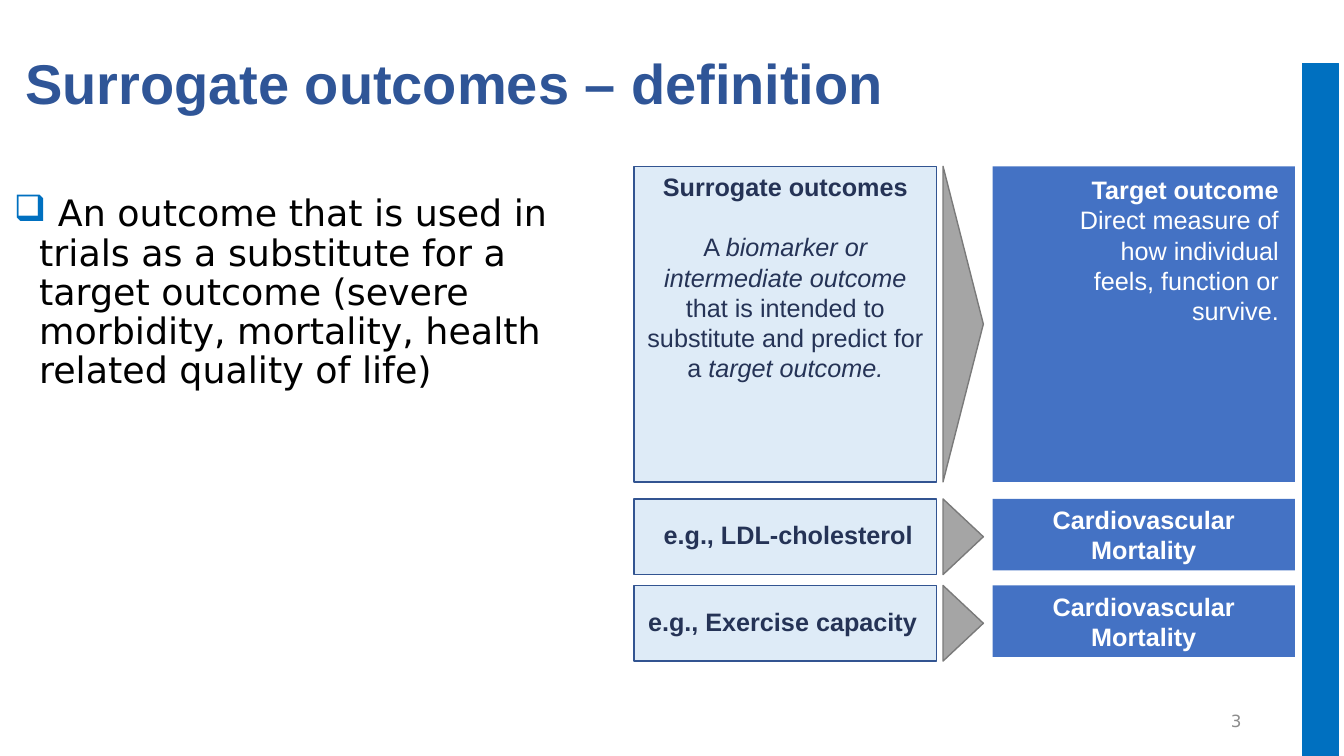
"""Build the slide that defines surrogate outcomes."""
from dataclasses import dataclass

from lxml.etree import SubElement
from pptx import Presentation
from pptx.dml.color import RGBColor
from pptx.enum.shapes import MSO_SHAPE as Preset
from pptx.enum.text import MSO_ANCHOR as Anchor, MSO_AUTO_SIZE as AutoSize, PP_ALIGN as Align
from pptx.oxml.ns import qn
from pptx.util import Pt

TITLE_BLUE = RGBColor(0x2F, 0x55, 0x97)
STRIPE_BLUE = RGBColor(0x00, 0x70, 0xC0)
TARGET_BLUE = RGBColor(0x44, 0x72, 0xC4)
PALE_BLUE = RGBColor(0xDE, 0xEB, 0xF7)
EDGE_BLUE = RGBColor(0x32, 0x54, 0x91)
NAVY = RGBColor(0x25, 0x33, 0x56)
ARROW_GRAY = RGBColor(0xA5, 0xA5, 0xA5)
ARROW_EDGE = RGBColor(0x7A, 0x7A, 0x7A)
NUMBER_GRAY = RGBColor(0x8C, 0x8C, 0x8C)
WHITE = RGBColor(0xFF, 0xFF, 0xFF)
BLACK = RGBColor(0, 0, 0)

HEADING_FONT = "Arial"
BODY_FONT = "DejaVu Sans"

SURROGATE_LEFT, TARGET_LEFT, PANEL_WIDTH = 453, 709, 216
ARROW_LEFT, ARROW_WIDTH = 673.6, 28.8


@dataclass(frozen=True)
class Piece:
    text: str
    bold: bool = False
    italic: bool = False


@dataclass(frozen=True)
class Panel:
    paragraphs: list[list[Piece]]
    height: float
    align: Align = Align.CENTER
    anchor: Anchor = Anchor.MIDDLE
    insets: tuple[float, float, float, float] = (7.2, 3.6, 7.2, 3.6)
    gap: float = 0


@dataclass(frozen=True)
class Row:
    top: float
    surrogate: Panel
    target: Panel


MORTALITY = Panel([[Piece("Cardiovascular Mortality", bold=True)]], 51)

ROWS = [
    Row(
        118.8,
        Panel(
            [
                [Piece("Surrogate outcomes", bold=True)],
                [
                    Piece("A "),
                    Piece("biomarker or intermediate outcome", italic=True),
                    Piece(" that is intended to substitute and predict for a "),
                    Piece("target outcome.", italic=True),
                ],
            ],
            225.4,
            anchor=Anchor.TOP,
            gap=21.5,
        ),
        Panel(
            [
                [Piece("Target outcome", bold=True)],
                [Piece("Direct measure of how individual feels, function or survive.")],
            ],
            225.4,
            align=Align.RIGHT,
            anchor=Anchor.TOP,
            insets=(47.5, 5.8, 11.5, 3.6),
        ),
    ),
    Row(
        356.4,
        Panel([[Piece("e.g., LDL-cholesterol", bold=True)]], 54, insets=(11.2, 3.6, 7.2, 6.6)),
        MORTALITY,
    ),
    Row(
        418.2,
        Panel([[Piece("e.g., Exercise capacity", bold=True)]], 54, insets=(7.2, 3.6, 11.2, 6.6)),
        MORTALITY,
    ),
]


def style_font(font, name: str, size: float, color: RGBColor) -> None:
    font.name = name
    font.size = Pt(size)
    font.color.rgb = color


def add_block(slide, preset: Preset, left: float, top: float, width: float, height: float,
              fill: RGBColor, edge: RGBColor | None = None):
    shape = slide.shapes.add_shape(preset, Pt(left), Pt(top), Pt(width), Pt(height))
    shape.shadow.inherit = False
    shape.fill.solid()
    shape.fill.fore_color.rgb = fill
    if edge is None:
        shape.line.fill.background()
    else:
        shape.line.color.rgb = edge
        shape.line.width = Pt(1)
    return shape


def add_panel(slide, panel: Panel, left: float, top: float, color: RGBColor,
              fill: RGBColor, edge: RGBColor | None = None) -> None:
    shape = add_block(slide, Preset.RECTANGLE, left, top, PANEL_WIDTH, panel.height, fill, edge)
    frame = shape.text_frame
    frame.word_wrap = True
    frame.vertical_anchor = panel.anchor
    frame.margin_left, frame.margin_top, frame.margin_right, frame.margin_bottom = map(
        Pt, panel.insets)
    for index, pieces in enumerate(panel.paragraphs):
        paragraph = frame.add_paragraph() if index else frame.paragraphs[0]
        paragraph.alignment = panel.align
        if index:
            paragraph.space_before = Pt(panel.gap)
        for piece in pieces:
            run = paragraph.add_run()
            run.text = piece.text
            style_font(run.font, HEADING_FONT, 18, color)
            run.font.bold = piece.bold
            run.font.italic = piece.italic


def add_arrow(slide, row: Row) -> None:
    length = row.surrogate.height
    left = ARROW_LEFT + (ARROW_WIDTH - length) / 2
    top = row.top + (length - ARROW_WIDTH) / 2
    arrow = add_block(slide, Preset.ISOSCELES_TRIANGLE, left, top, length, ARROW_WIDTH,
                      ARROW_GRAY, ARROW_EDGE)
    arrow.rotation = 90


def add_title(slide) -> None:
    title = slide.shapes.title
    title.left, title.top, title.width, title.height = Pt(10.8), Pt(7.2), Pt(736), Pt(80)
    frame = title.text_frame
    frame.text = "Surrogate outcomes – definition"
    frame.auto_size = AutoSize.NONE
    frame.vertical_anchor = Anchor.BOTTOM
    paragraph = frame.paragraphs[0]
    paragraph.alignment = Align.LEFT
    paragraph.line_spacing = 0.9
    style_font(paragraph.runs[0].font, HEADING_FONT, 40, TITLE_BLUE)
    paragraph.runs[0].font.bold = True


def add_text(slide, text: str, left: float, top: float, width: float, height: float,
             size: float, color: RGBColor):
    frame = slide.shapes.add_textbox(Pt(left), Pt(top), Pt(width), Pt(height)).text_frame
    frame.word_wrap = True
    frame.text = text
    style_font(frame.paragraphs[0].runs[0].font, BODY_FONT, size, color)
    return frame


def add_definition(slide) -> None:
    frame = add_text(
        slide,
        " An outcome that is used in trials as a substitute for a target outcome "
        "(severe morbidity, mortality, health related quality of life)",
        2.9, 136, 438.5, 361, 26, BLACK)
    paragraph = frame.paragraphs[0]
    paragraph.line_spacing = 0.9
    properties = paragraph._p.get_or_add_pPr()
    properties.set("marL", str(Pt(18)))
    properties.set("indent", str(-Pt(18)))
    bullet_color = SubElement(properties, qn("a:buClr"))
    SubElement(bullet_color, qn("a:srgbClr"), val=str(STRIPE_BLUE))
    SubElement(properties, qn("a:buChar"), char="❑")


def main() -> None:
    presentation = Presentation()
    presentation.slide_width, presentation.slide_height = Pt(960), Pt(540)
    slide = presentation.slides.add_slide(presentation.slide_layouts[5])
    add_block(slide, Preset.RECTANGLE, 930.2, 45.4, 26, 494.6, STRIPE_BLUE, STRIPE_BLUE)
    add_title(slide)
    add_definition(slide)
    for row in ROWS:
        add_panel(slide, row.target, TARGET_LEFT, row.top, WHITE, TARGET_BLUE)
        add_panel(slide, row.surrogate, SURROGATE_LEFT, row.top, NAVY, PALE_BLUE, EDGE_BLUE)
        add_arrow(slide, row)
    number = add_text(slide, "3", 678, 500.5, 216, 28.8, 12, NUMBER_GRAY)
    number.vertical_anchor = Anchor.MIDDLE
    number.paragraphs[0].alignment = Align.RIGHT
    presentation.save("out.pptx")


if __name__ == "__main__":
    main()
